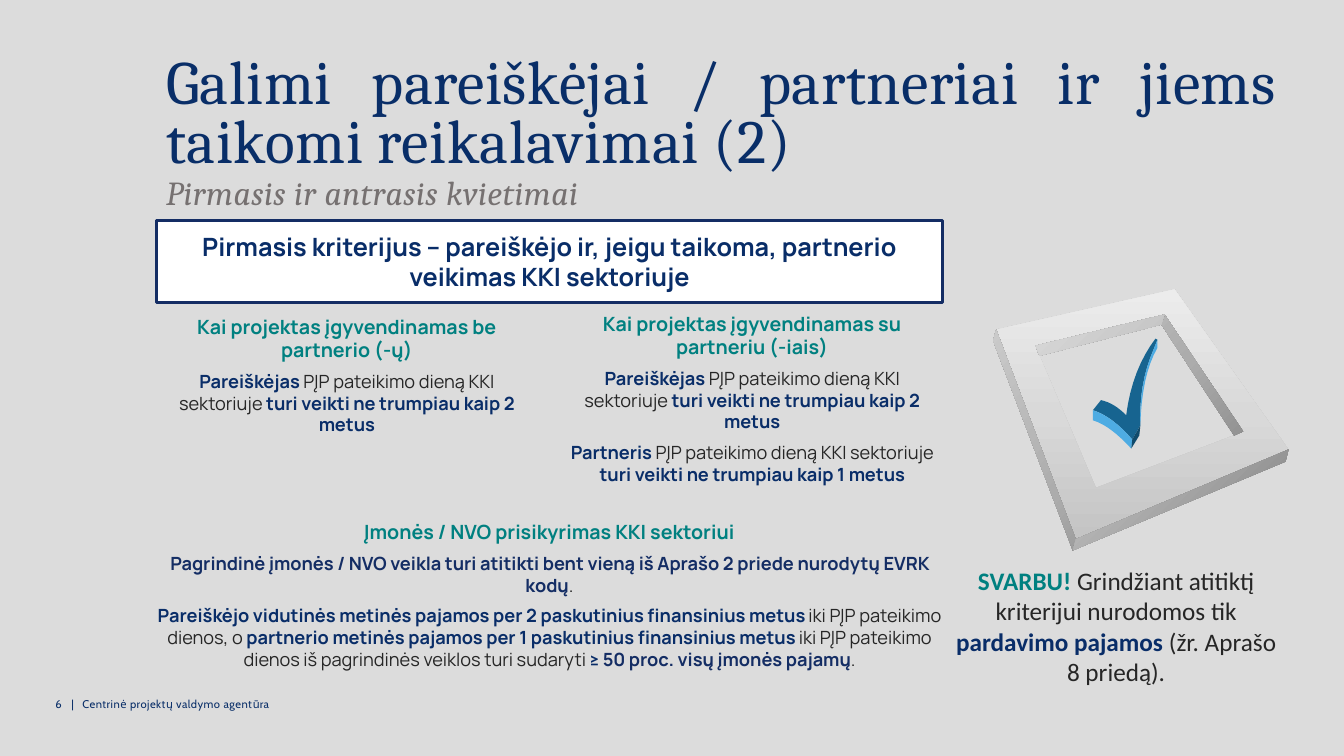
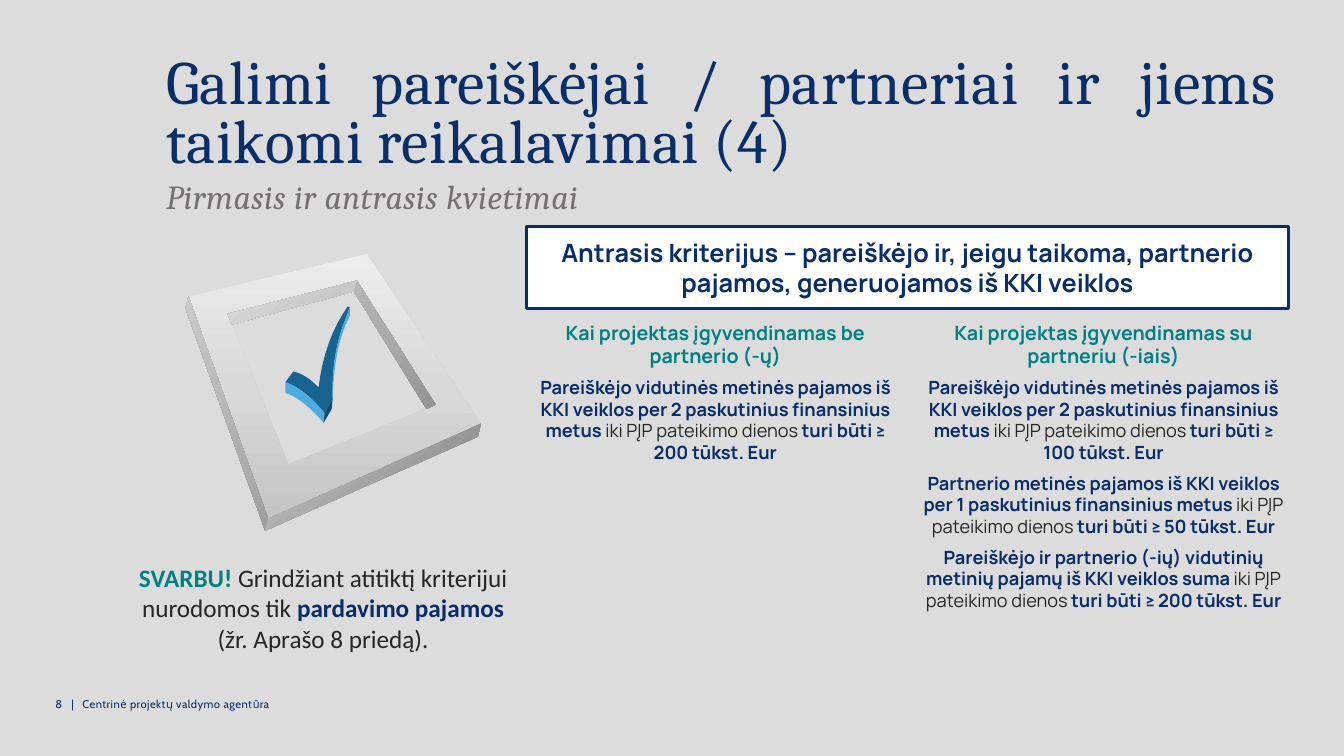
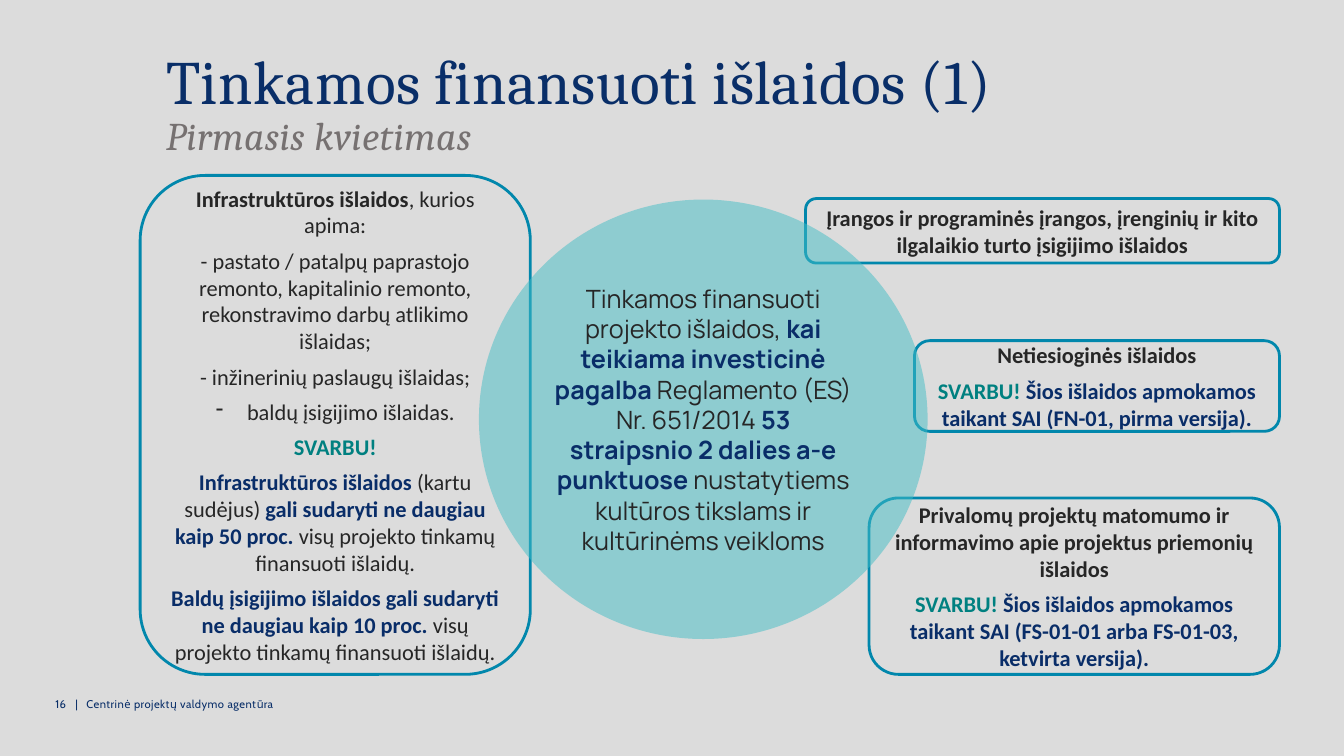
from copy import deepcopy

from lxml import etree
from pptx import Presentation
from pptx.dml.color import RGBColor
from pptx.enum.shapes import MSO_SHAPE
from pptx.enum.text import MSO_ANCHOR, PP_ALIGN
from pptx.oxml.ns import qn
from pptx.util import Inches, Pt

LEFT, CENTER, JUSTIFY = PP_ALIGN.LEFT, PP_ALIGN.CENTER, PP_ALIGN.JUSTIFY
TOP, MIDDLE = MSO_ANCHOR.TOP, MSO_ANCHOR.MIDDLE
RECT, ROUNDED, CIRCLE = (MSO_SHAPE.RECTANGLE, MSO_SHAPE.ROUNDED_RECTANGLE,
                         MSO_SHAPE.FLOWCHART_CONNECTOR)

WIDTH, HEIGHT = 13.33, 7.5
MARGIN, RIGHT_EDGE = 1.55, 12.78
PAGE, WHITE, NAVY, DEEP_NAVY = "DCDCDC", "FFFFFF", "092D68", "142D64"
TITLE_NAVY, INK, GREY = "092E68", "262626", "767171"
TEAL, OUTLINE, AQUA = "008080", "0187AC", "42BDC6"
SERIF, SANS, BODY, SMALL = "Cambria", "Manrope", "Calibri", "Cabin"

FRAME_TOP = [
    [(2.93, 1.59), (0.82, 2.48), (0.03, 0.4), (1.8, 0)],
    [(0.46, 0.66), (1.02, 1.97), (2.39, 1.45), (2.48, 1.41), (1.7, 0.25), (0.42, 0.56)],
]
FRAME_LEFT = [
    [(0.03, 0.4), (0.82, 2.48), (0.79, 2.59), (0, 0.51)],
    [(2.39, 1.45), (1.67, 0.35), (1.7, 0.25), (2.48, 1.41)],
]
FRAME_BOTTOM = [
    [(0.82, 2.48), (2.93, 1.59), (2.9, 1.71), (0.79, 2.59)],
    [(1.67, 0.35), (0.46, 0.66), (0.42, 0.56), (1.7, 0.25)],
]
TICK_FACE = [
    [(1.63, 0.5), (1.59, 0.6), (1.49, 0.83, 1.45, 1.08, 1.46, 1.35), (1.38, 1.49),
     (1.25, 1.34, 1.12, 1.24, 0.99, 1.2), (1.07, 1.1),
     (1.16, 1.12, 1.24, 1.17, 1.32, 1.25), (1.36, 0.94, 1.46, 0.69, 1.61, 0.49)],
]
TICK_SIDE = [
    [(1.38, 1.49), (1.37, 1.58), (1.24, 1.44, 1.12, 1.34, 0.99, 1.3), (0.99, 1.2),
     (1.12, 1.24, 1.25, 1.34, 1.38, 1.49)],
    [(1.63, 0.5), (1.63, 0.58), (1.52, 0.77, 1.47, 1.03, 1.46, 1.35),
     (1.45, 1.08, 1.49, 0.83, 1.59, 0.6)],
]
TICK_EDGE = [[(1.46, 1.35), (1.45, 1.45), (1.37, 1.58), (1.38, 1.49)]]
CHECKBOX = [
    (FRAME_TOP, ["C4C4C4", "D9D9D9", "ECECEC"], 90),
    (FRAME_LEFT, ["797979", "ACACAC", "CCCCCC"], 135),
    (FRAME_BOTTOM, ["808080", "B7B7B7", "D9D9D9"], 135),
    (TICK_FACE, ["176490"], 0),
    (TICK_SIDE, ["4EACE3"], 0),
    (TICK_EDGE, ["114B6C"], 0),
]


def rgb(code):
    """Turn a hex string into a colour."""
    return RGBColor.from_string(code)


def strong(text, color=NAVY, **extra):
    """Return a bold run."""
    return text, dict(color=color, bold=True, **extra)


def heading(text):
    """Return a paragraph that heads a column."""
    return [strong(text, TEAL, size=14)]


def add_properties(paragraph, bullet, tabs):
    """Give a paragraph a hanging bullet or tab stops."""
    properties = paragraph._p.get_or_add_pPr()
    if tabs:
        stops = etree.SubElement(properties, qn("a:tabLst"))
        for tab in tabs:
            etree.SubElement(stops, qn("a:tab"), pos=str(Inches(tab)), algn="l")
    if bullet:
        properties.set("marL", str(Inches(0.31)))
        properties.set("indent", str(-Inches(0.31)))
        etree.SubElement(properties, qn("a:buChar"), char=bullet)


def write(shape, paragraphs, size=16, font=BODY, color=INK, align=CENTER, after=0,
          line=None, spacing=0, inset=None, anchor=TOP, bullets=None, tabs=()):
    """Fill a shape with paragraphs of plain or formatted runs."""
    frame = shape.text_frame
    frame.word_wrap = True
    frame.vertical_anchor = anchor
    if inset is not None:
        frame.margin_left = frame.margin_right = Inches(inset)
        frame.margin_top = frame.margin_bottom = Inches(inset)
    for index, runs in enumerate(paragraphs):
        paragraph = frame.add_paragraph() if index else frame.paragraphs[0]
        paragraph.alignment = align
        paragraph.space_after = Pt(after)
        if line:
            paragraph.line_spacing = line
        add_properties(paragraph, (bullets or {}).get(index), tabs)
        for part in runs:
            words, look = part if isinstance(part, tuple) else (part, {})
            run = paragraph.add_run()
            run.text = words
            run.font.size = Pt(look.get("size", size))
            run.font.name = look.get("font", font)
            run.font.bold = look.get("bold", False)
            run.font.italic = look.get("italic", False)
            run.font.color.rgb = rgb(look.get("color", color))
            if spacing:
                run._r.get_or_add_rPr().set("spc", str(spacing))


def add_text(slide, box, paragraphs, **look):
    """Add a text box."""
    write(slide.shapes.add_textbox(*map(Inches, box)), paragraphs, **look)


def add_panel(slide, kind, box, paragraphs, fill=None, outline=None, alpha=None, **look):
    """Add a preset shape that holds text."""
    panel = slide.shapes.add_shape(kind, *map(Inches, box))
    panel.shadow.inherit = False
    if fill:
        panel.fill.solid()
        panel.fill.fore_color.rgb = rgb(fill)
    else:
        panel.fill.background()
    if alpha:
        tint = panel._element.spPr.find(".//" + qn("a:srgbClr"))
        etree.SubElement(tint, qn("a:alpha"), val=str(alpha * 1000))
    if outline:
        panel.line.color.rgb = rgb(outline)
        panel.line.width = Pt(2)
    else:
        panel.line.fill.background()
    write(panel, paragraphs, anchor=MIDDLE, **look)


def flatten(contour, steps=8):
    """Replace the curves of a contour by short lines."""
    points = []
    for node in contour:
        if len(node) == 2:
            points.append(node)
            continue
        nodes = [points[-1], node[:2], node[2:4], node[4:]]
        for step in range(1, steps + 1):
            t = step / steps
            weights = [(1 - t) ** 3, 3 * t * (1 - t) ** 2, 3 * t * t * (1 - t), t ** 3]
            points.append(tuple(sum(w * n[axis] for w, n in zip(weights, nodes))
                                for axis in (0, 1)))
    return points


def add_outline(slide, contours, left, top, stretch, colors, angle):
    """Draw one filled part of the checkbox."""
    builder = None
    for contour in contours:
        points = [(Inches(left + x), Inches(top + y * stretch)) for x, y in flatten(contour)]
        if builder is None:
            builder = slide.shapes.build_freeform(*points[0])
        else:
            builder.move_to(*points[0])
        builder.add_line_segments(points[1:], close=True)
    part = builder.convert_to_shape()
    part.shadow.inherit = False
    part.line.fill.background()
    if len(colors) == 1:
        part.fill.solid()
        part.fill.fore_color.rgb = rgb(colors[0])
        return
    part.fill.gradient()
    part.fill.gradient_angle = angle
    stops = part._element.spPr.find(".//" + qn("a:gsLst"))
    stops.insert(1, deepcopy(stops[0]))
    for index, stop in enumerate(part.fill.gradient_stops):
        stop.position = index / 2
        stop.color.rgb = rgb(colors[index])


def add_checkbox(slide, left, top, stretch=1.0):
    """Draw the tilted checkbox with its tick."""
    for contours, colors, angle in CHECKBOX:
        add_outline(slide, contours, left, top, stretch, colors, angle)


def add_slide(deck, number, title, subtitle, subtitle_size=24, align=JUSTIFY, after=3):
    """Add a slide with its title, subtitle and footer."""
    slide = deck.slides.add_slide(deck.slide_layouts[6])
    add_text(slide, (MARGIN, 0.52, RIGHT_EDGE - MARGIN, 1.1),
             [[title], [(subtitle, dict(size=subtitle_size, color=GREY, italic=True))]],
             size=44, font=SERIF, color=TITLE_NAVY, align=align, after=after,
             line=0.8, spacing=40)
    bar = 0.12 + 0.04 * len(str(number))
    add_text(slide, (0.45, 6.87, 3.2, 0.4),
             [[f"{number}\t|\tCentrinė projektų valdymo agentūra"]], size=8, font=SMALL,
             color=TITLE_NAVY, align=LEFT, spacing=30, tabs=(bar, bar + 0.11))
    return slide


def add_banner(slide, box, text, outline):
    """Add the framed name of a criterion."""
    add_panel(slide, RECT, box, [[strong(text)]], fill=WHITE, outline=outline,
              size=18, font=SANS, inset=0)


def add_column(slide, box, paragraphs):
    """Add a column of requirements under a heading."""
    add_text(slide, box, paragraphs, size=13, font=SANS, after=6, inset=0)


def add_note(slide, box):
    """Add the remark on sales income."""
    add_text(slide, box, [[strong("SVARBU! ", TEAL),
                           "Grindžiant atitiktį kriterijui nurodomos tik ",
                           strong("pardavimo pajamos "), "(žr. Aprašo 8 priedą)."]], size=18)


def activity(who, years):
    """Return the requirement on time active in the sector."""
    return [strong(who), " PĮP pateikimo dieną KKI sektoriuje ",
            strong(f"turi veikti ne trumpiau kaip {years} metus")]


def income(what, amount):
    """Return the requirement on income."""
    return [strong(what + " "), "iki PĮP pateikimo dienos ", strong("turi būti "),
            strong("≥", font=BODY), strong(f" {amount} tūkst. Eur")]


def build_first_criterion(deck, alone, together):
    """Build the slide on activity in the sector."""
    slide = add_slide(deck, 6,
                      "Galimi pareiškėjai / partneriai ir jiems taikomi reikalavimai (2)",
                      "Pirmasis ir antrasis kvietimai")
    width, column = 7.8, 3.78
    applicant = activity("Pareiškėjas", 2)
    add_banner(slide, (MARGIN, 2.19, width, 0.81),
               "Pirmasis kriterijus – pareiškėjo ir, jeigu taikoma, partnerio "
               "veikimas KKI sektoriuje", DEEP_NAVY)
    add_column(slide, (MARGIN, 3.12, column, 1.21), [alone, applicant])
    add_column(slide, (MARGIN + width - column, 3.09, column, 1.95),
               [together, applicant, activity("Partneris", 1)])
    add_column(slide, (MARGIN, 5.16, width, 1.72), [
        heading("Įmonės / NVO prisikyrimas KKI sektoriui"),
        [strong("Pagrindinė įmonės / NVO veikla turi atitikti bent vieną iš Aprašo 2 priede "
                "nurodytų EVRK kodų", DEEP_NAVY), "."],
        [strong("Pareiškėjo vidutinės metinės pajamos per 2 paskutinius finansinius metus "),
         "iki PĮP pateikimo dienos, o ",
         strong("partnerio metinės pajamos per 1 paskutinius finansinius metus"),
         " iki PĮP pateikimo dienos iš pagrindinės veiklos turi sudaryti ",
         strong("≥ ", font=BODY), strong("50 proc. visų įmonės pajamų", DEEP_NAVY), "."],
    ])
    add_checkbox(slide, 9.85, 2.87)
    add_note(slide, (MARGIN + width, 5.56, 3.44, 1.31))


def build_second_criterion(deck, alone, together):
    """Build the slide on income from the sector."""
    slide = add_slide(deck, 8,
                      "Galimi pareiškėjai / partneriai ir jiems taikomi reikalavimai (4)",
                      "Pirmasis ir antrasis kvietimai", after=6)
    width, column = 7.56, 3.67
    applicant = ("Pareiškėjo vidutinės metinės pajamos iš KKI veiklos "
                 "per 2 paskutinius finansinius metus")
    add_banner(slide, (RIGHT_EDGE - width, 2.25, width, 0.81),
               "Antrasis kriterijus – pareiškėjo ir, jeigu taikoma, partnerio "
               "pajamos, generuojamos iš KKI veiklos", NAVY)
    add_column(slide, (5.26, 3.18, column, 1.43), [alone, income(applicant, 200)])
    add_column(slide, (RIGHT_EDGE - column, 3.18, column, 3.35), [
        together,
        income(applicant, 100),
        income("Partnerio metinės pajamos iš KKI veiklos "
               "per 1 paskutinius finansinius metus", 50),
        income("Pareiškėjo ir partnerio (-ių) vidutinių metinių pajamų "
               "iš KKI veiklos suma", 200),
    ])
    add_checkbox(slide, 1.84, 2.52, stretch=1.06)
    add_note(slide, (1.27, 5.53, 3.87, 1.01))


def build_costs(deck):
    """Build the slide on eligible costs."""
    slide = add_slide(deck, 16, "Tinkamos finansuoti išlaidos (1)", "Pirmasis kvietimas",
                      subtitle_size=28, align=LEFT)
    edge = 12.69
    warning = strong("SVARBU! ", TEAL)
    add_panel(slide, ROUNDED, (1.39, 1.74, 3.87, 4.95), [
        [strong("Infrastruktūros išlaidos", INK), ", kurios apima:"],
        ["- pastato / patalpų paprastojo remonto, kapitalinio remonto, "
         "rekonstravimo darbų atlikimo išlaidas;"],
        ["- inžinerinių paslaugų išlaidas;"],
        ["baldų įsigijimo išlaidas."],
        [strong("SVARBU!", TEAL)],
        [strong("Infrastruktūros išlaidos "), "(kartu sudėjus) ",
         strong("gali sudaryti ne daugiau kaip 50 proc. "),
         "visų projekto tinkamų finansuoti išlaidų."],
        [strong("Baldų įsigijimo išlaidos gali sudaryti ne daugiau kaip 10 proc."),
         " visų projekto tinkamų finansuoti išlaidų."],
    ], outline=OUTLINE, after=6, bullets={3: "-"})
    cost_groups = [
        (1.97, 4.7, 0.64,
         [[strong("Įrangos ir programinės įrangos, įrenginių ir kito ilgalaikio turto "
                  "įsigijimo išlaidos", INK)]]),
        (3.38, 3.62, 0.9,
         [[strong("Netiesioginės išlaidos", INK)],
          [warning, strong("Šios išlaidos apmokamos taikant SAI (FN-01, pirma versija).")]]),
        (4.94, 4.07, 1.75,
         [[strong("Privalomų projektų matomumo ir informavimo apie projektus priemonių "
                  "išlaidos", INK)],
          [warning, strong("Šios išlaidos apmokamos taikant SAI (FS-01-01 arba FS-01-03, "
                           "ketvirta versija).")]]),
    ]
    for top, width, height, paragraphs in cost_groups:
        add_panel(slide, ROUNDED, (edge - width, top, width, height), paragraphs,
                  outline=OUTLINE, after=6)
    add_panel(slide, CIRCLE, (4.75, 1.98, 4.45, 4.36), [[
        "Tinkamos finansuoti projekto išlaidos, ", strong("kai teikiama investicinė pagalba "),
        "Reglamento (ES) Nr. 651/2014 ", strong("53 straipsnio 2 dalies a-e punktuose "),
        "nustatytiems kultūros tikslams ir kultūrinėms veikloms",
    ]], fill=AQUA, alpha=50, size=18, font=SANS)


def main():
    """Build and save the deck."""
    deck = Presentation()
    deck.slide_width, deck.slide_height = Inches(WIDTH), Inches(HEIGHT)
    background = deck.slide_master.background.fill
    background.solid()
    background.fore_color.rgb = rgb(PAGE)
    alone = heading("Kai projektas įgyvendinamas be partnerio (-ų)")
    together = heading("Kai projektas įgyvendinamas su partneriu (-iais)")
    build_first_criterion(deck, alone, together)
    build_second_criterion(deck, alone, together)
    build_costs(deck)
    deck.save("out.pptx")


if __name__ == "__main__":
    main()
